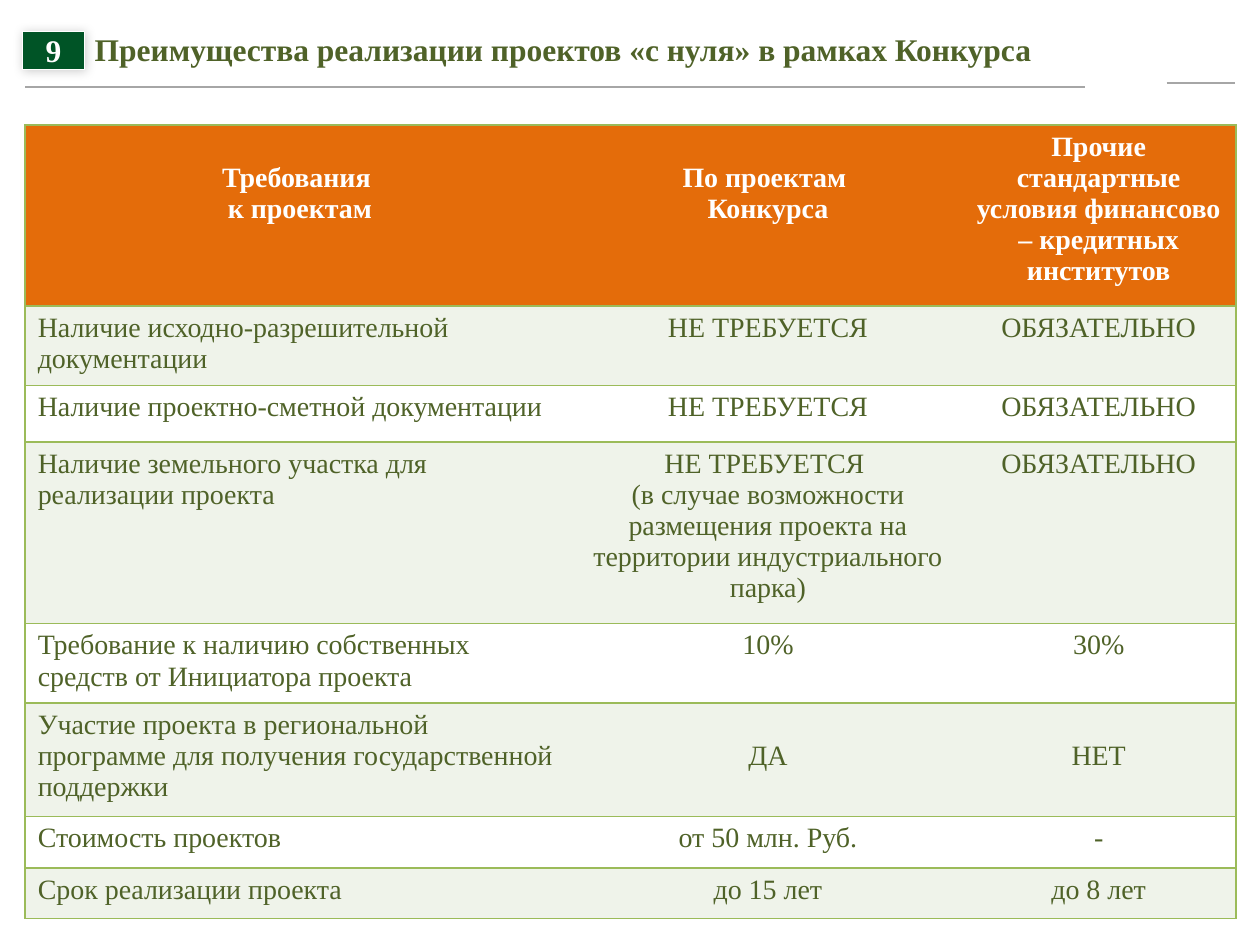
from typing import NamedTuple

import pptx
import pptx.dml.color
import pptx.enum.shapes
import pptx.enum.text
import pptx.oxml
import pptx.oxml.ns
import pptx.util
from pptx.util import Inches

Align = pptx.enum.text.PP_ALIGN
Anchor = pptx.enum.text.MSO_ANCHOR

FONT = "Times New Roman"
NS = pptx.oxml.ns.nsdecls("a")
COLORS = {
    "text": "4F6228", "head": "E46C0A", "band": "EFF3EA", "white": "FFFFFF",
    "border": "9BBB59", "rule": "A6A6A6", "badge": "005426", "shadow": "000000",
}


class Rule(NamedTuple):
    left: float
    right: float
    top: float


class Row(NamedTuple):
    height: float
    cells: tuple[str, str, str]
    drop: tuple[int, ...] = ()  # columns whose text starts one line lower


RULES = [Rule(0.2, 8.61, 0.69), Rule(9.26, 9.8, 0.66)]
WIDTHS = [4.36, 3.07, 2.18]
ROWS = [
    Row(1.44, ("Требования \nк проектам", "По проектам \nКонкурса",
               "Прочие стандартные условия финансово – кредитных институтов"), (0, 1)),
    Row(0.63, ("Наличие исходно-разрешительной документации",
               "НЕ ТРЕБУЕТСЯ", "ОБЯЗАТЕЛЬНО")),
    Row(0.45, ("Наличие проектно-сметной документации",
               "НЕ ТРЕБУЕТСЯ", "ОБЯЗАТЕЛЬНО")),
    Row(1.44, ("Наличие земельного участка для реализации проекта",
               "НЕ ТРЕБУЕТСЯ \n(в случае возможности размещения проекта на "
               "территории индустриального парка)", "ОБЯЗАТЕЛЬНО")),
    Row(0.63, ("Требование к наличию собственных средств от Инициатора проекта",
               "10%", "30%")),
    Row(0.9, ("Участие проекта в региональной программе для получения "
              "государственной поддержки", "ДА", "НЕТ"), (1, 2)),
    Row(0.41, ("Стоимость проектов", "от 50 млн. Руб.", "-")),
    Row(0.4, ("Срок реализации проекта", "до 15 лет", "до 8 лет")),
]


def rgb(name: str) -> pptx.dml.color.RGBColor:
    return pptx.dml.color.RGBColor.from_string(COLORS[name])


def style(frame, size: int, color: str, bold: bool, align: Align) -> None:
    for para in frame.paragraphs:
        para.alignment = align
        font = para.font
        font.name, font.size, font.bold = FONT, pptx.util.Pt(size), bold
        font.color.rgb = rgb(color)


def inset(frame, left: float = 0) -> None:
    """Clear the margins except the left one and center vertically."""
    frame.margin_right = frame.margin_top = frame.margin_bottom = 0
    frame.margin_left = Inches(left)
    frame.vertical_anchor = Anchor.MIDDLE


def add_rule(slide, rule: Rule) -> None:
    line = slide.shapes.add_connector(
        pptx.enum.shapes.MSO_CONNECTOR.STRAIGHT, Inches(rule.left),
        Inches(rule.top), Inches(rule.right), Inches(rule.top))
    line.line.color.rgb = rgb("rule")
    line.line.width = pptx.util.Pt(1)
    line._element.spPr.append(pptx.oxml.parse_xml(f"<a:effectLst {NS}/>"))


def add_title(slide, text: str) -> None:
    title = slide.shapes.title
    title.left, title.top = Inches(0.2), Inches(0.27)
    title.width, title.height = Inches(8.29), Inches(0.27)
    frame = title.text_frame
    frame.text = text
    frame.word_wrap = True
    inset(frame, 0.25)
    frame.paragraphs[0].line_spacing = 0.9
    style(frame, 18, "text", True, Align.CENTER)


def add_badge(slide, text: str) -> None:
    badge = slide.shapes.add_shape(
        pptx.enum.shapes.MSO_SHAPE.RECTANGLE,
        Inches(0.18), Inches(0.25), Inches(0.49), Inches(0.3))
    badge.fill.solid()
    badge.fill.fore_color.rgb = rgb("badge")
    badge.line.color.rgb = rgb("white")
    badge.line.width = pptx.util.Pt(0.75)
    badge._element.spPr.append(pptx.oxml.parse_xml(
        f'<a:effectLst {NS}><a:outerShdw blurRad="76200" dist="12700" dir="2700000">'
        f'<a:srgbClr val="{COLORS["shadow"]}"><a:alpha val="20000"/></a:srgbClr>'
        '</a:outerShdw></a:effectLst>'))
    badge.text_frame.text = text
    inset(badge.text_frame)
    style(badge.text_frame, 18, "white", True, Align.CENTER)


def set_borders(cell, sides: str) -> None:
    """Draw the given sides (of L, R, T, B) and clear the others."""
    props = cell._tc.get_or_add_tcPr()
    for spot, side in enumerate("LRTB"):
        fill = (f'<a:solidFill><a:srgbClr val="{COLORS["border"]}"/></a:solidFill>'
                if side in sides else "<a:noFill/>")
        props.insert(spot, pptx.oxml.parse_xml(
            f'<a:ln{side} {NS} w="12700">{fill}</a:ln{side}>'))


def add_table(slide, rows: list[Row], widths: list[float]) -> None:
    table = slide.shapes.add_table(
        len(rows), len(widths), Inches(0.2), Inches(0.99),
        Inches(sum(widths)), Inches(sum(row.height for row in rows))).table
    table.horz_banding = False
    for col, width in zip(table.columns, widths):
        col.width = Inches(width)
    for r, row in enumerate(rows):
        table.rows[r].height = Inches(row.height)
        head = r == 0
        fill = "head" if head else "band" if r % 2 else "white"
        for c, text in enumerate(row.cells):
            cell = table.cell(r, c)
            cell.text = text
            cell.fill.solid()
            cell.fill.fore_color.rgb = rgb(fill)
            cell.margin_top = Inches(0.3 if c in row.drop else 0.05)
            align = Align.CENTER if head or c else Align.LEFT
            style(cell.text_frame, 16, "white" if head else "text", head, align)
            set_borders(cell, ("LTB", "TB", "RTB")[c])


def main() -> None:
    deck = pptx.Presentation()
    deck.slide_width, deck.slide_height = Inches(10), Inches(7.5)
    slide = deck.slides.add_slide(deck.slide_layouts[5])
    for rule in RULES:
        add_rule(slide, rule)
    add_title(slide, "Преимущества реализации проектов «с нуля» в рамках Конкурса")
    add_table(slide, ROWS, WIDTHS)
    add_badge(slide, "9")
    deck.save("out.pptx")


if __name__ == "__main__":
    main()
